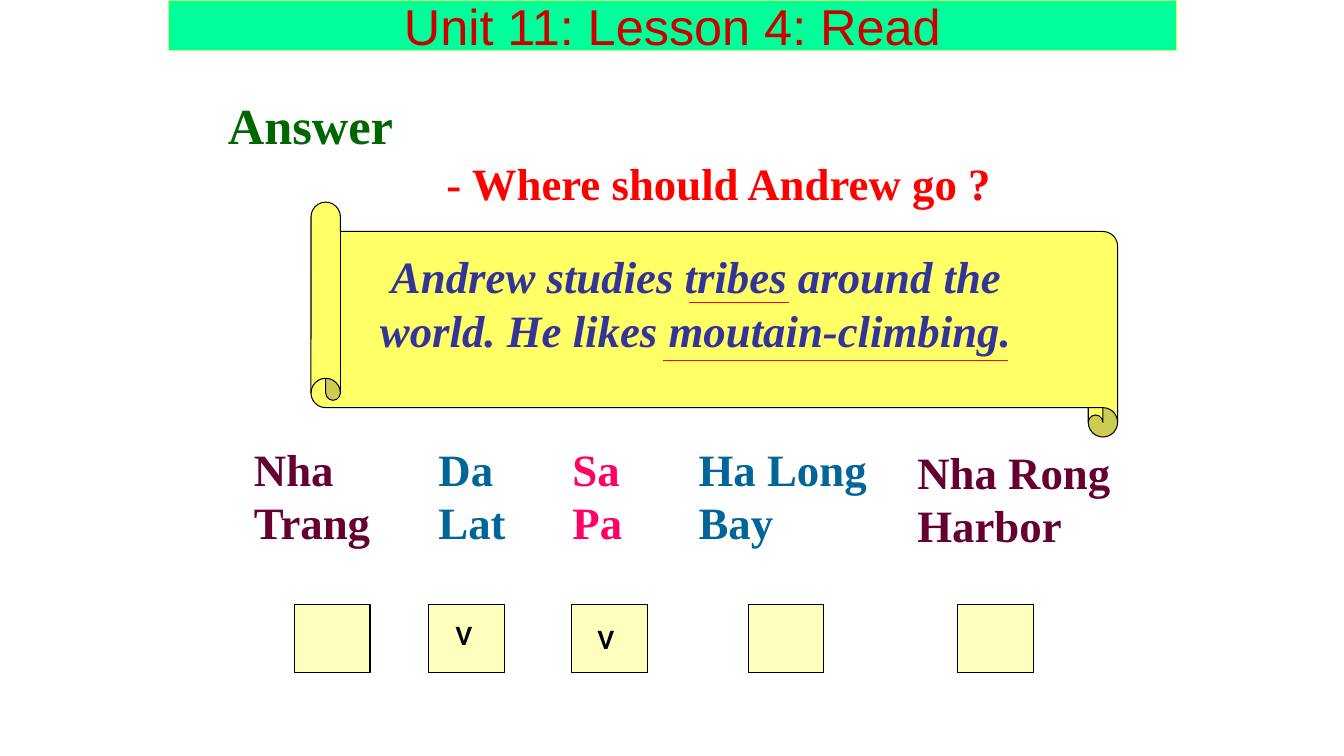
from dataclasses import dataclass
from lxml import etree
from pptx import Presentation
from pptx.dml.color import RGBColor as RGB
from pptx.enum.shapes import MSO_CONNECTOR as CONN, MSO_SHAPE as SHAPE
from pptx.enum.text import MSO_ANCHOR as ANCHOR, PP_ALIGN as ALIGN
from pptx.oxml.ns import qn
from pptx.util import Inches, Pt


@dataclass(frozen=True)
class Theme:
    serif: str = "Times New Roman"
    sans: str = "Arial"
    mark: str = "Calibri"
    heading_size: int = 36
    body_size: int = 32
    mark_size: int = 20
    line_width: float = 0.75
    banner: str = "00FF99"
    banner_edge: str = "CCFF66"
    title: str = "CC0000"
    green: str = "006600"
    red: str = "FF0000"
    navy: str = "333399"
    plum: str = "660033"
    blue: str = "006699"
    pink: str = "FF0066"
    black: str = "000000"
    scroll: str = "FFFF66"
    box: str = "FFFFBD"


class SlideBuilder:
    def __init__(self, slide, theme):
        self.s = slide
        self.theme = theme

    def place(self, sp, at):
        sp.left, sp.top, sp.width, sp.height = [Inches(v) for v in at]

    def paint(self, sp, fill, line):
        sp.fill.solid()
        sp.fill.fore_color.rgb = RGB.from_string(fill)
        sp.line.color.rgb = RGB.from_string(line)
        sp.line.width = Pt(self.theme.line_width)

    def style(self, p, color, size, font, bold, italic=False):
        for r in p.runs:
            f = r.font
            f.name, f.size, f.bold, f.italic = font, Pt(size), bold, italic
            f.color.rgb = RGB.from_string(color)

    def title(self, text, at):
        t = self.theme
        sp = self.s.shapes.title
        self.place(sp, at)
        self.paint(sp, t.banner, t.banner_edge)
        tf = sp.text_frame
        tf.text = text
        tf.word_wrap = False
        tf.vertical_anchor = ANCHOR.MIDDLE
        p = tf.paragraphs[0]
        p.alignment = ALIGN.CENTER
        p.line_spacing = 1.0
        self.style(p, t.title, t.heading_size, t.sans, False)

    def text(self, text, at, color, size=None, font=None, italic=False,
             align=ALIGN.LEFT, indent=0):
        t = self.theme
        sp = self.s.shapes.add_textbox(*[Inches(v) for v in at])
        tf = sp.text_frame
        tf.word_wrap = True
        tf.text = text
        p = tf.paragraphs[0]
        p.alignment = align
        if indent:
            p._p.get_or_add_pPr().set("indent", str(Inches(indent)))
        self.style(p, color, size or t.body_size, font or t.serif, True, italic)

    def shape(self, kind, at, fill, rotation=0):
        sp = self.s.shapes.add_shape(kind, *[Inches(v) for v in at])
        sp.shadow.inherit = False
        sp.rotation = rotation
        self.paint(sp, fill, self.theme.black)

    def underline(self, x1, x2, y):
        c = self.s.shapes.add_connector(
            CONN.STRAIGHT, Inches(x1), Inches(y), Inches(x2), Inches(y))
        c.line.color.rgb = RGB.from_string(self.theme.red)
        c.line.width = Pt(self.theme.line_width)
        etree.SubElement(c._element.spPr, qn("a:effectLst"))


def main():
    prs = Presentation()
    prs.slide_width, prs.slide_height = Inches(13.33), Inches(7.5)
    t = Theme()
    b = SlideBuilder(prs.slides.add_slide(prs.slide_layouts[5]), t)

    b.title("Unit 11: Lesson 4: Read", (1.67, 0, 10, 0.5))
    b.text("Answer", (2.08, 0.88, 2, 0.65), t.green, t.heading_size,
           align=ALIGN.CENTER)
    b.text("- Where should Andrew go ?", (4.33, 1.5, 6, 0.63), t.red)

    b.shape(SHAPE.VERTICAL_SCROLL, (5.92, -0.83, 2.33, 8), t.scroll, 270)
    b.text("Andrew studies tribes around the world. He likes moutain-climbing.",
           (3.67, 2.42, 7.17, 1.17), t.navy, italic=True, indent=0.11)
    b.underline(6.83, 7.83, 3)
    b.underline(6.58, 10, 3.58)

    places = [
        ("Nha Trang", 2.42, 4.33, 1.58, t.plum, 2.92),
        ("Da Lat", 4.25, 4.33, 0.92, t.blue, 4.25),
        ("Sa Pa", 5.58, 4.33, 1, t.pink, 5.67),
        ("Ha Long Bay", 6.83, 4.33, 2.08, t.blue, 7.42),
        ("Nha Rong Harbor", 9, 4.36, 2.17, t.plum, 9.5),
    ]
    for name, x, y, width, color, box_x in places:
        b.text(name, (x, y, width, 1.17), color)
        b.shape(SHAPE.RECTANGLE, (box_x, 6, 0.75, 0.67), t.box)

    for x, y in ((4.42, 6.08), (5.83, 6.12)):
        b.text("V", (x, y, 0.58, 0.43), t.black, t.mark_size, t.mark)

    prs.save("out.pptx")


if __name__ == "__main__":
    main()
